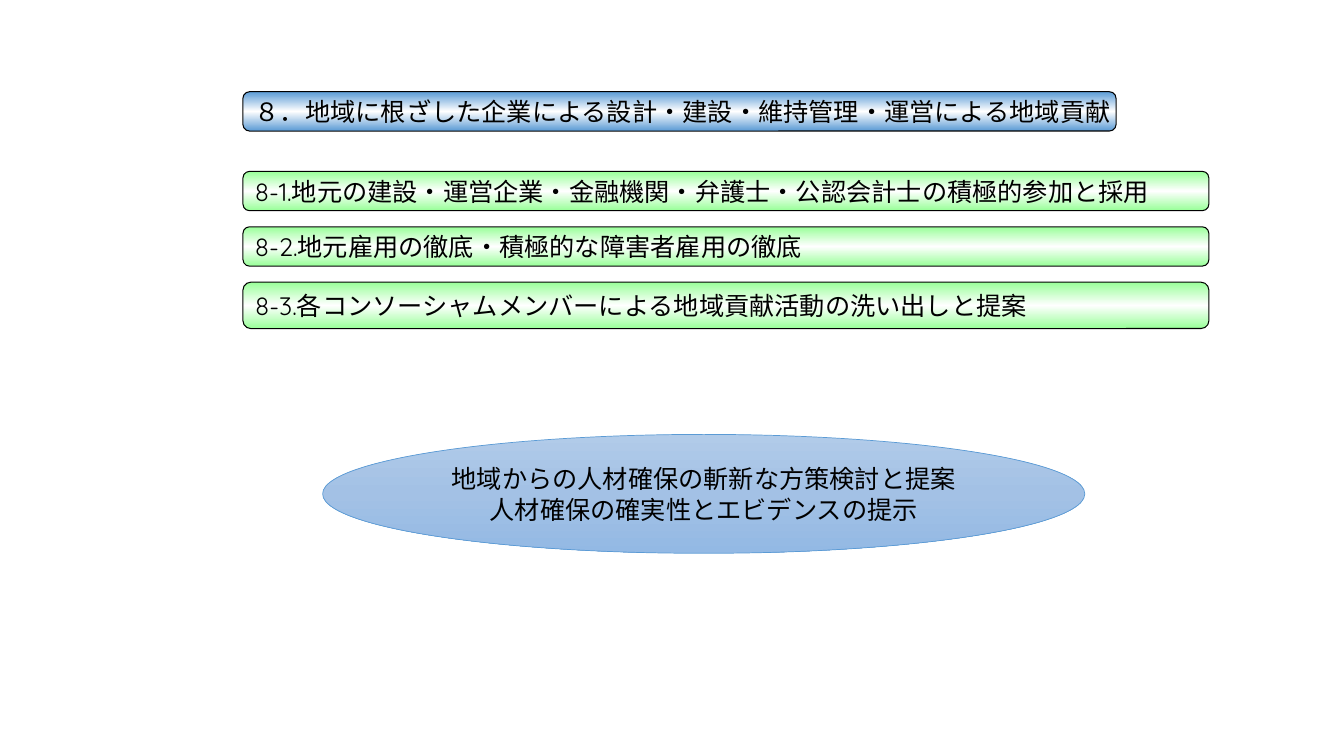
from copy import deepcopy
from dataclasses import dataclass

from pptx import Presentation
from pptx.dml.color import RGBColor
from pptx.enum.shapes import MSO_SHAPE as Shape
from pptx.enum.text import MSO_ANCHOR as Anchor, PP_ALIGN as Align
from pptx.oxml.ns import qn
from pptx.util import Pt

PX = 9144


@dataclass(frozen=True)
class Theme:
    font: str = "Quicksand"
    text_size: int = 18
    text: str = "000000"
    bar_line: str = "000000"
    oval_line: str = "5B9BD5"
    heading: tuple = ("5B9BD5", "FFFFFF", "5B9BD5")
    item: tuple = ("99FF99", "FFFFFF", "99FF99")
    oval: tuple = ("B1CBE9", "A3C1E5", "93B9E4")


class SlideBuilder:
    def __init__(self, slide, theme):
        self.slide = slide
        self.theme = theme

    def bar(self, text, left, top, width, height, colors):
        shape = self.add_outline(Shape.ROUNDED_RECTANGLE, left, top, width, height)
        shape.adjustments[0] = 0.167
        self.paint(shape, colors, self.theme.bar_line, 0.75)
        self.set_text(shape, text, Align.LEFT, False)

    def oval(self, text, left, top, width, height):
        shape = self.add_outline(Shape.OVAL, left, top, width, height)
        self.paint(shape, self.theme.oval, self.theme.oval_line, 0.5)
        self.set_text(shape, text, Align.CENTER, True)

    def add_outline(self, kind, *box):
        shape = self.slide.shapes.add_shape(kind, *(value * PX for value in box))
        shape.shadow.inherit = False
        return shape

    def paint(self, shape, colors, line_color, line_width):
        fill = shape.fill
        fill.gradient()
        fill.gradient_angle = 270
        stop_list = next(shape._element.spPr.iter(qn("a:gsLst")))
        stop_list.append(deepcopy(stop_list[0]))
        for index, (stop, color) in enumerate(zip(fill.gradient_stops, colors)):
            stop.color.rgb = RGBColor.from_string(color)
            stop.position = index / 2
        shape.line.color.rgb = RGBColor.from_string(line_color)
        shape.line.width = Pt(line_width)

    def set_text(self, shape, text, alignment, wrap):
        frame = shape.text_frame
        frame.word_wrap = wrap
        frame.vertical_anchor = Anchor.MIDDLE
        frame.text = text
        for paragraph in frame.paragraphs:
            paragraph.alignment = alignment
            for run in paragraph.runs:
                run.font.size = Pt(self.theme.text_size)
                run.font.color.rgb = RGBColor.from_string(self.theme.text)
                run.font.name = self.theme.font
                latin = next(run._r.iter(qn("a:latin")))
                east_asian = latin.makeelement(
                    qn("a:ea"), {"typeface": self.theme.font})
                latin.addnext(east_asian)


def main():
    presentation = Presentation()
    presentation.slide_width = 1333 * PX
    presentation.slide_height = 750 * PX
    slide = presentation.slides.add_slide(presentation.slide_layouts[6])
    theme = Theme()
    builder = SlideBuilder(slide, theme)

    left = 241
    builder.bar("８．地域に根ざした企業による設計・建設・維持管理・運営による地域貢献",
                left, 91, 866, 39, theme.heading)

    items = [
        ("8-1.地元の建設・運営企業・金融機関・弁護士・公認会計士の積極的参加と採用", 39),
        ("8-2.地元雇用の徹底・積極的な障害者雇用の徹底", 39),
        ("8-3.各コンソーシャムメンバーによる地域貢献活動の洗い出しと提案", 46),
    ]
    top, gap = 170, 16
    for text, height in items:
        builder.bar(text, left, top, 958, height, theme.item)
        top += height + gap

    builder.oval("地域からの人材確保の斬新な方策検討と提案\n人材確保の確実性とエビデンスの提示",
                 320, 431, 756, 118)
    presentation.save("out.pptx")


if __name__ == "__main__":
    main()
